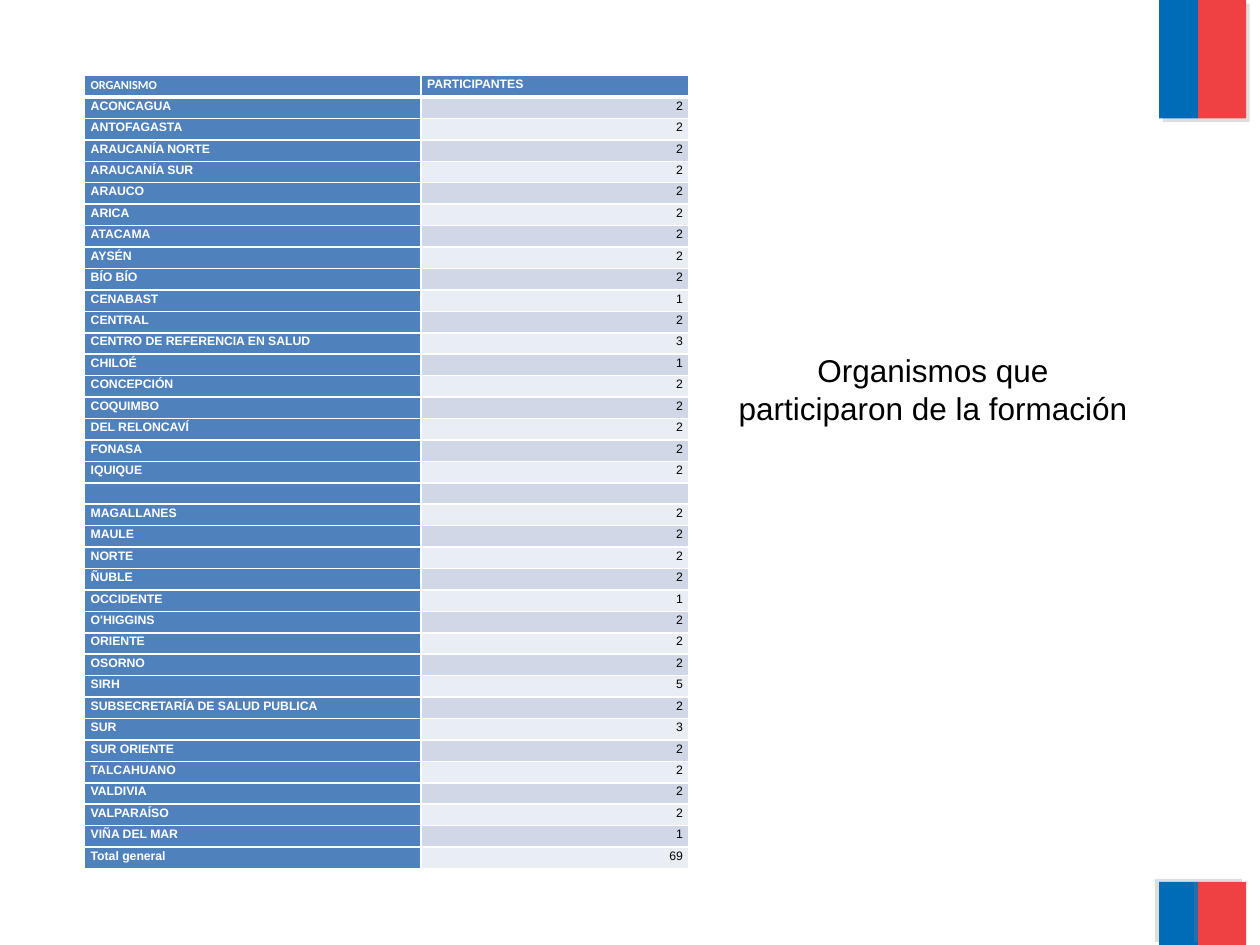
from dataclasses import dataclass

from lxml import etree
from pptx import Presentation
from pptx.dml.color import RGBColor
from pptx.enum.shapes import MSO_SHAPE
from pptx.enum.text import MSO_ANCHOR, PP_ALIGN
from pptx.oxml.ns import qn
from pptx.util import Inches, Pt

RECT = MSO_SHAPE.RECTANGLE
LEFT, MID, RIGHT = PP_ALIGN.LEFT, PP_ALIGN.CENTER, PP_ALIGN.RIGHT
CENTER = MSO_ANCHOR.MIDDLE


@dataclass(frozen=True)
class Theme:
    blue: str = "006CB7"
    red: str = "EF4144"
    shade: str = "808080"
    head: str = "4F81BD"
    bands: tuple = ("D0D8E8", "E9EDF4")
    white: str = "FFFFFF"
    black: str = "000000"
    font: str = "Arial"
    alt: str = "Calibri"
    title: int = 18
    cell: int = 7


THEME = Theme()
HEADS = ("ORGANISMO", "PARTICIPANTES")
ROWS = (
    ("ACONCAGUA", 2), ("ANTOFAGASTA", 2), ("ARAUCANÍA NORTE", 2),
    ("ARAUCANÍA SUR", 2), ("ARAUCO", 2), ("ARICA", 2), ("ATACAMA", 2),
    ("AYSÉN", 2), ("BÍO BÍO", 2), ("CENABAST", 1), ("CENTRAL", 2),
    ("CENTRO DE REFERENCIA EN SALUD", 3), ("CHILOÉ", 1), ("CONCEPCIÓN", 2),
    ("COQUIMBO", 2), ("DEL RELONCAVÍ", 2), ("FONASA", 2), ("IQUIQUE", 2),
    ("", ""), ("MAGALLANES", 2), ("MAULE", 2), ("NORTE", 2), ("ÑUBLE", 2),
    ("OCCIDENTE", 1), ("O'HIGGINS", 2), ("ORIENTE", 2), ("OSORNO", 2),
    ("SIRH", 5), ("SUBSECRETARÍA DE SALUD PUBLICA", 2), ("SUR", 3),
    ("SUR ORIENTE", 2), ("TALCAHUANO", 2), ("VALDIVIA", 2),
    ("VALPARAÍSO", 2), ("VIÑA DEL MAR", 1), ("Total general", 69),
)


def apply(item, form):
    for name, value in form.items():
        setattr(item, name, value)


def node(parent, tag, **attrs):
    return etree.SubElement(parent, qn(tag), {k: str(v) for k, v in attrs.items()})


def paint(fill, color):
    fill.solid()
    fill.fore_color.rgb = RGBColor.from_string(color)


def style(font, size, color, name=THEME.font, bold=False):
    apply(font, {"size": Pt(size), "name": name, "bold": bold})
    font.color.rgb = RGBColor.from_string(color)


def shadow(shape, angle):
    shape.shadow.inherit = False
    effects = shape._element.spPr.find(qn("a:effectLst"))
    outer = node(effects, "a:outerShdw", dist=Pt(3), dir=angle * 60000,
                 algn="ctr", rotWithShape=0)
    color = node(outer, "a:srgbClr", val=THEME.shade)
    node(color, "a:alpha", val=25000)


def flag(slide, left, top, width, height, angle):
    split = Inches(0.31)
    parts = ((left, split, THEME.blue), (left + split, width - split, THEME.red))
    for x, wide, color in parts:
        bar = slide.shapes.add_shape(RECT, x, top, wide, height)
        paint(bar.fill, color)
        bar.line.fill.background()
        shadow(bar, angle)


def border(cell, row):
    props = cell._tc.get_or_add_tcPr()
    for side in "LRTB":
        thick = (row, side) in ((0, "B"), (1, "T"))
        line = node(props, f"a:ln{side}", w=Pt(3 if thick else 1))
        node(node(line, "a:solidFill"), "a:srgbClr", val=THEME.white)


def entry(cell, text, row, col):
    dark = row == 0 or col == 0
    border(cell, row)
    paint(cell.fill, THEME.head if dark else THEME.bands[(row - 1) % 2])
    apply(cell, {"margin_left": Inches(0.05), "margin_right": Inches(0.05),
                 "margin_top": 0, "margin_bottom": 0})
    para = cell.text_frame.paragraphs[0]
    apply(para, {"alignment": LEFT if dark else RIGHT, "line_spacing": 1.15})
    if text == "":
        node(para._p, "a:endParaRPr", sz=THEME.cell * 100)
        return
    run = para.add_run()
    run.text = str(text)
    style(run.font, THEME.cell, THEME.white if dark else THEME.black,
          THEME.alt if row == col == 0 else THEME.font, dark)


def roster(slide, left, top, width, height):
    data = (HEADS,) + ROWS
    table = slide.shapes.add_table(len(data), 2, left, top, width, height).table
    first = Inches(2.67)
    for column, wide in zip(table.columns, (first, width - first)):
        column.width = wide
    for r, values in enumerate(data):
        table.rows[r].height = height // len(data)
        for c, text in enumerate(values):
            entry(table.cell(r, c), text, r, c)


def heading(slide, left, top, width, height):
    title = slide.shapes.title
    apply(title, {"left": left, "top": top, "width": width, "height": height})
    frame = title.text_frame
    apply(frame, {"word_wrap": True, "vertical_anchor": CENTER})
    para = frame.paragraphs[0]
    para.alignment = MID
    run = para.add_run()
    run.text = "Organismos que participaron de la formación"
    style(run.font, THEME.title, THEME.black)


def main():
    deck = Presentation()
    apply(deck, {"slide_width": Inches(10), "slide_height": Inches(7.5)})
    slide = deck.slides.add_slide(deck.slide_layouts[5])
    flag(slide, Inches(9.2), 0, Inches(0.69), Inches(0.94), 45)
    flag(slide, Inches(9.2), Inches(7), Inches(0.69), Inches(0.5), 215)
    roster(slide, Inches(0.67), Inches(0.6), Inches(4.8), Inches(6.3))
    heading(slide, Inches(5.71), Inches(2.73), Inches(3.39), Inches(0.71))
    deck.save("out.pptx")


if __name__ == "__main__":
    main()
